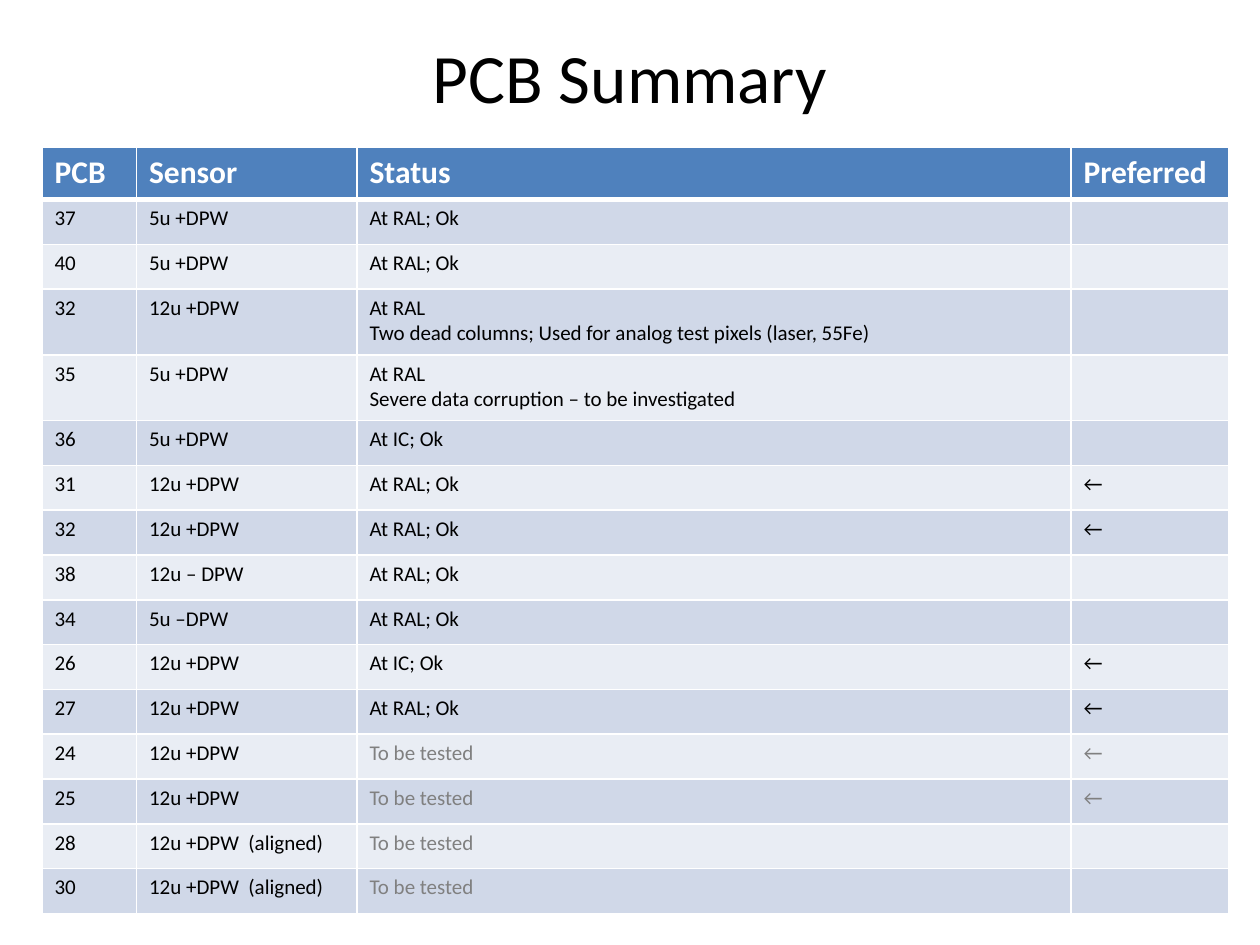
"""Build the PCB Summary slide with its status table."""
import pptx
import pptx.dml.color
import pptx.enum.text
import pptx.oxml
import pptx.oxml.ns
import pptx.util
import lxml.etree

PX = 2540
COLORS = {
    "header": "4F81BD",
    "odd": "D0D8E8",
    "even": "E9EDF4",
    "white": "FFFFFF",
    "black": "000000",
    "pending": "808080",
}
COLUMN_WIDTHS = [270, 630, 2040, 450]
HEADER_HEIGHT, ROW_HEIGHT, TALL_ROW_HEIGHT = 150, 128, 188
PENDING = "To be tested"
ROWS = [
    ("PCB", "Sensor", "Status", "Preferred"),
    ("37", "5u +DPW", "At RAL; Ok", ""),
    ("40", "5u +DPW", "At RAL; Ok", ""),
    ("32", "12u +DPW", "At RAL\nTwo dead columns; Used for analog test pixels (laser, 55Fe)", ""),
    ("35", "5u +DPW", "At RAL\nSevere data corruption – to be investigated", ""),
    ("36", "5u +DPW", "At IC; Ok", ""),
    ("31", "12u +DPW", "At RAL; Ok", "←"),
    ("32", "12u +DPW", "At RAL; Ok", "←"),
    ("38", "12u – DPW", "At RAL; Ok", ""),
    ("34", "5u –DPW", "At RAL; Ok", ""),
    ("26", "12u +DPW", "At IC; Ok", "←"),
    ("27", "12u +DPW", "At RAL; Ok", "←"),
    ("24", "12u +DPW", PENDING, "←"),
    ("25", "12u +DPW", PENDING, "←"),
    ("28", "12u +DPW  (aligned)", PENDING, ""),
    ("30", "12u +DPW  (aligned)", PENDING, ""),
]


def add_text(paragraph, text, size, color, bold=False):
    """Add one formatted run to a paragraph."""
    run = paragraph.add_run()
    run.text = text
    run.font.name = "Calibri"
    run.font.size = pptx.util.Pt(size)
    run.font.bold = bold
    run.font.color.rgb = pptx.dml.color.RGBColor.from_string(COLORS[color])


def set_borders(cell, widths):
    """Draw white borders, given as points by side, ahead of the cell fill."""
    properties = cell._tc.get_or_add_tcPr()
    for index, (side, width) in enumerate(widths.items()):
        line = pptx.oxml.parse_xml(
            f'<a:ln{side} {pptx.oxml.ns.nsdecls("a")} w="{pptx.util.Pt(width)}">'
            f'<a:solidFill><a:srgbClr val="{COLORS["white"]}"/></a:solidFill></a:ln{side}>'
        )
        properties.insert(index, line)


presentation = pptx.Presentation()
presentation.slide_width = 3600 * PX
presentation.slide_height = 2700 * PX
slide = presentation.slides.add_slide(presentation.slide_layouts[5])

title = slide.shapes.title
title.left, title.top, title.width, title.height = [n * PX for n in (180, 90, 3240, 252)]
title.text_frame.auto_size = pptx.enum.text.MSO_AUTO_SIZE.NONE
title.text_frame.vertical_anchor = pptx.enum.text.MSO_ANCHOR.MIDDLE
title_paragraph = title.text_frame.paragraphs[0]
title_paragraph.alignment = pptx.enum.text.PP_ALIGN.CENTER
add_text(title_paragraph, "PCB Summary", 39.6, "black")

row_heights = [HEADER_HEIGHT] + [
    TALL_ROW_HEIGHT if "\n" in row[2] else ROW_HEIGHT for row in ROWS[1:]
]
table = slide.shapes.add_table(
    len(ROWS), len(COLUMN_WIDTHS),
    120 * PX, 420 * PX, sum(COLUMN_WIDTHS) * PX, sum(row_heights) * PX,
).table
for column, width in zip(table.columns, COLUMN_WIDTHS):
    column.width = width * PX

for row_index, values in enumerate(ROWS):
    table.rows[row_index].height = row_heights[row_index] * PX
    is_header = row_index == 0
    fill = "header" if is_header else ("odd" if row_index % 2 else "even")
    size = 18 if is_header else 12
    for column_index, value in enumerate(values):
        cell = table.cell(row_index, column_index)
        cell.fill.solid()
        cell.fill.fore_color.rgb = pptx.dml.color.RGBColor.from_string(COLORS[fill])
        set_borders(cell, {
            "L": 1, "R": 1,
            "T": 3 if row_index == 1 else 1,
            "B": 3 if is_header else 1,
        })
        color = "white" if is_header else "black"
        if values[2] == PENDING and column_index >= 2:
            color = "pending"
        for line_index, line in enumerate(value.split("\n")):
            frame = cell.text_frame
            paragraph = frame.add_paragraph() if line_index else frame.paragraphs[0]
            if line:
                add_text(paragraph, line, size, color, is_header)
            else:
                end = lxml.etree.SubElement(paragraph._p, pptx.oxml.ns.qn("a:endParaRPr"))
                end.set("sz", str(size * 100))

presentation.save("out.pptx")
